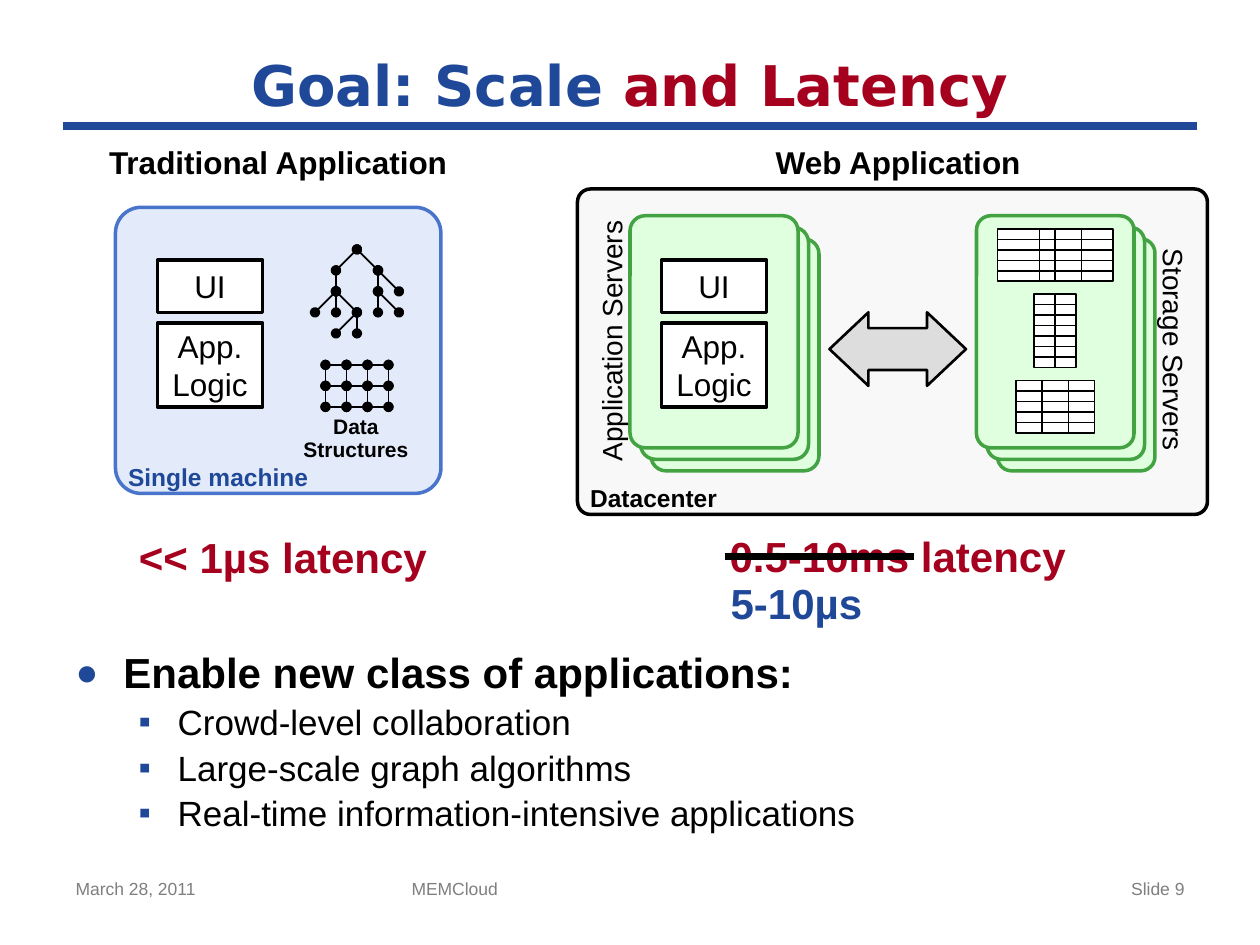
"""Build a slide comparing scale and latency of traditional and web applications."""
import itertools

import lxml.etree
import pptx
import pptx.dml.color
import pptx.enum.shapes
import pptx.enum.text
import pptx.oxml.ns
import pptx.util

CELL = 1 / 12
COLUMNS, ROWS = 120, 90
SHAPES = pptx.enum.shapes.MSO_SHAPE
ALIGN = pptx.enum.text.PP_ALIGN
LEFT, CENTER, RIGHT = ALIGN.LEFT, ALIGN.CENTER, ALIGN.RIGHT

THEME = {
    "font": "Arial", "title_font": "DejaVu Sans",
    "blue": "1F4899", "red": "A5001E", "black": "000000", "gray": "7F7F7F", "white": "FFFFFF",
    "center_fill": "F8F8F8", "server_fill": "DFFFDF", "server_line": "43A343",
    "machine_fill": "E3EAF9", "machine_line": "4974CB", "arrow_fill": "DDDDDD",
    "title": 32, "heading": 24, "item": 20, "label": 18, "side": 16, "place": 14, "small": 12,
    "footer": 10,
}

TITLE = [("Goal: Scale ", "blue"), ("and Latency", "red")]
FOOTERS = [
    ("March 28, 2011", (6, 83, 28, 5.2), LEFT),
    ("MEMCloud", (38, 83, 45, 5.2), LEFT),
    ("Slide 9", (86, 83, 28, 5.2), RIGHT),
]
HEADINGS = [
    ("Traditional Application", (9, 13, 35, 4.8), "label", "black"),
    ("Web Application", (69.1, 13, 32.9, 4.8), "label", "black"),
    ("<< 1µs latency", (12, 50, 29.9, 6), "heading", "red"),
    ("0.5-10ms latency", (68, 49.95, 35, 6), "heading", "red"),
]
SIDE_LABELS = [
    ("Application Servers", (44.7, 30.3, 27, 4.4), 270),
    ("Storage Servers", (99.3, 31.1, 25, 4.4), 90),
]
PLACES = [
    ("Datacenter", (55, 46, 14.5, 2.9), "black"),
    ("Single machine", (11, 44, 19.7, 2.9), "blue"),
]
GOAL = "Enable new class of applications:"
EXAMPLES = ["Crowd-level collaboration", "Large-scale graph algorithms",
            "Real-time information-intensive applications"]
SERVER_STACKS = [(60, 16), (93, 15)]
STACK_TOP, STACK_HEIGHT, STACK_STEP = 20.55, 22.1, (1, 1.1)
MODULES = [("UI", 24.75, 5), ("App.\nLogic", 30.75, 8)]
STORED_TABLES = [
    ((95, 21.8), 11, 5, (4, 5.5, 8)),
    ((98.5, 28), 4, 7, (2,)),
    ((96.75, 36.25), 7.5, 5, (2.5, 5)),
]
TREE_ORIGIN, LATTICE_ORIGIN, NODE_STEP = (30, 23.75), (31, 34.75), 2
TREE_EDGES = [
    ((2, 0), (3, 1)), ((2, 0), (1, 1)), ((3, 1), (4, 2)), ((3, 1), (3, 2)),
    ((1, 1), (1, 2)), ((1, 2), (0, 3)), ((1, 2), (1, 3)), ((1, 2), (2, 3)),
    ((3, 2), (3, 3)), ((3, 2), (4, 3)), ((2, 3), (1, 4)), ((2, 3), (2, 4)),
]
LATTICE_SIZE = (4, 3)


def cells(*counts):
    return [pptx.util.Inches(count * CELL) for count in counts]


def color(name):
    return pptx.dml.color.RGBColor.from_string(THEME[name])


def add_text(paragraph, text, size, ink, bold=False, font="font"):
    for index, line in enumerate(text.split("\n")):
        if index:
            paragraph.add_line_break()
        run = paragraph.add_run()
        run.text = line
        run.font.name = THEME[font]
        run.font.size = pptx.util.Pt(THEME[size])
        run.font.bold = bold
        run.font.color.rgb = color(ink)


def add_box(slide, place, align=LEFT, wrap=True, side=1.2, top=0.6):
    box = slide.shapes.add_textbox(*cells(*place))
    frame = box.text_frame
    frame.word_wrap = wrap
    frame.margin_left, frame.margin_right, frame.margin_top, frame.margin_bottom = cells(
        side, side, top, top)
    frame.paragraphs[0].alignment = align
    return box


def add_label(slide, text, place, size, ink, bold=False, **layout):
    box = add_box(slide, place, **layout)
    add_text(box.text_frame.paragraphs[0], text, size, ink, bold)
    return box


def add_block(slide, kind, place, fill, line="black", width=2, adjustments=()):
    shape = slide.shapes.add_shape(kind, *cells(*place))
    shape.shadow.inherit = False
    shape.fill.solid()
    shape.fill.fore_color.rgb = color(fill)
    shape.line.color.rgb = color(line)
    shape.line.width = pptx.util.Pt(width)
    for index, value in enumerate(adjustments):
        shape.adjustments[index] = value
    return shape


def add_line(slide, start, end, width=1, ink="black", dots=False):
    line = slide.shapes.add_connector(
        pptx.enum.shapes.MSO_CONNECTOR.STRAIGHT, *cells(*start, *end))
    line.line.color.rgb = color(ink)
    line.line.width = pptx.util.Pt(width)
    if dots:
        outline = line.line._get_or_add_ln()
        for tag in ("a:headEnd", "a:tailEnd"):
            lxml.etree.SubElement(outline, pptx.oxml.ns.qn(tag), type="oval")
    lxml.etree.SubElement(line._element.spPr, pptx.oxml.ns.qn("a:effectLst"))
    return line


def add_modules(slide, left):
    for text, top, height in MODULES:
        shape = add_block(slide, SHAPES.RECTANGLE, (left, top, 10, height), "white")
        shape.text_frame.word_wrap = False
        shape.text_frame.vertical_anchor = pptx.enum.text.MSO_ANCHOR.MIDDLE
        paragraph = shape.text_frame.paragraphs[0]
        paragraph.alignment = CENTER
        add_text(paragraph, text, "label", "black")


def add_stored_table(slide, corner, width, row_count, dividers):
    left, top = corner
    frame = add_block(slide, SHAPES.RECTANGLE, (left, top, width, row_count), "white", width=1)
    for offset in dividers:
        x = left + offset
        line = add_line(slide, (x, top), (x, top + row_count))
        if offset * 2 == width:
            line.begin_connect(frame, 0)
            line.end_connect(frame, 2)
    for row in range(1, row_count):
        add_line(slide, (left, top + row), (left + width, top + row))


def add_graph(slide, origin, edges):
    for edge in edges:
        start, end = [[base + NODE_STEP * step for base, step in zip(origin, node)]
                      for node in edge]
        add_line(slide, start, end, dots=True)


def add_bullet(paragraph, text, mark, margin, indent, before, size, bold=False, scale=100):
    properties = paragraph._p.get_or_add_pPr()
    properties.set("marL", str(pptx.util.Inches(margin)))
    properties.set("indent", str(pptx.util.Inches(-indent)))
    paragraph.space_before = pptx.util.Pt(before)
    mark_color = lxml.etree.SubElement(properties, pptx.oxml.ns.qn("a:buClr"))
    lxml.etree.SubElement(mark_color, pptx.oxml.ns.qn("a:srgbClr"), val=THEME["blue"])
    lxml.etree.SubElement(properties, pptx.oxml.ns.qn("a:buSzPct"), val=str(scale * 1000))
    lxml.etree.SubElement(properties, pptx.oxml.ns.qn("a:buFont"), typeface=THEME["font"])
    lxml.etree.SubElement(properties, pptx.oxml.ns.qn("a:buChar"), char=mark)
    add_text(paragraph, text, size, "black", bold)


def add_words(slide):
    add_line(slide, (6, 12), (114, 12), 4.5, "blue")
    for text, place, align in FOOTERS:
        add_label(slide, text, place, "footer", "gray", align=align)
    title = add_box(slide, (6, 4, 108, 8), CENTER).text_frame
    title.vertical_anchor = pptx.enum.text.MSO_ANCHOR.MIDDLE
    for text, ink in TITLE:
        add_text(title.paragraphs[0], text, "title", ink, True, "title_font")
    body = add_box(slide, (6, 61, 108, 26.2)).text_frame
    add_bullet(body.paragraphs[0], GOAL, "●", 0.38, 0.38, 6, "heading", True, 90)
    for text in EXAMPLES:
        paragraph = body.add_paragraph()
        paragraph.level = 1
        add_bullet(paragraph, text, "▪", 0.81, 0.31, 2, "item")
    for text, place, size, ink in HEADINGS:
        add_label(slide, text, place, size, ink, True, align=CENTER, wrap=False)
    add_label(slide, "5-10µs", (69.5, 55, 12.7, 4.8), "heading", "blue", True,
              align=CENTER, wrap=False, side=0, top=0)
    add_line(slide, (69, 53), (87, 53), 4)


def add_web_application(slide):
    rounded = SHAPES.ROUNDED_RECTANGLE
    add_block(slide, rounded, (55, 18, 60, 31), "center_fill", adjustments=[0.04])
    for (left, width), depth in itertools.product(SERVER_STACKS, (2, 1, 0)):
        x, y = left + depth * STACK_STEP[0], STACK_TOP + depth * STACK_STEP[1]
        add_block(slide, rounded, (x, y, width, STACK_HEIGHT), "server_fill", "server_line",
                  adjustments=[0.09])
    add_modules(slide, 63)
    for table in STORED_TABLES:
        add_stored_table(slide, *table)
    for text, place, angle in SIDE_LABELS:
        add_label(slide, text, place, "side", "black", align=CENTER).rotation = angle
    add_block(slide, SHAPES.LEFT_RIGHT_ARROW, (79, 29.75, 13, 7), "arrow_fill", width=1.5,
              adjustments=[0.57, 0.53])


def add_traditional_application(slide):
    add_block(slide, SHAPES.ROUNDED_RECTANGLE, (11, 19.75, 31, 27.25), "machine_fill",
              "machine_line", adjustments=[0.09])
    add_modules(slide, 15)
    add_graph(slide, TREE_ORIGIN, TREE_EDGES)
    nodes = itertools.product(*map(range, LATTICE_SIZE))
    add_graph(slide, LATTICE_ORIGIN, [
        (start, end) for start, end in itertools.combinations(nodes, 2)
        if abs(start[0] - end[0]) + abs(start[1] - end[1]) == 1])
    caption = add_label(slide, "Data\nStructures", (26.9, 39.1, 14, 5.5), "small", "black",
                        True, align=CENTER, wrap=False)
    caption.text_frame.paragraphs[0].line_spacing = 0.9


def main():
    presentation = pptx.Presentation()
    presentation.slide_width, presentation.slide_height = cells(COLUMNS, ROWS)
    slide = presentation.slides.add_slide(presentation.slide_layouts[6])
    add_words(slide)
    add_web_application(slide)
    add_traditional_application(slide)
    for text, place, ink in PLACES:
        add_label(slide, text, place, "place", ink, True, wrap=False, top=0)
    presentation.save("out.pptx")


if __name__ == "__main__":
    main()
